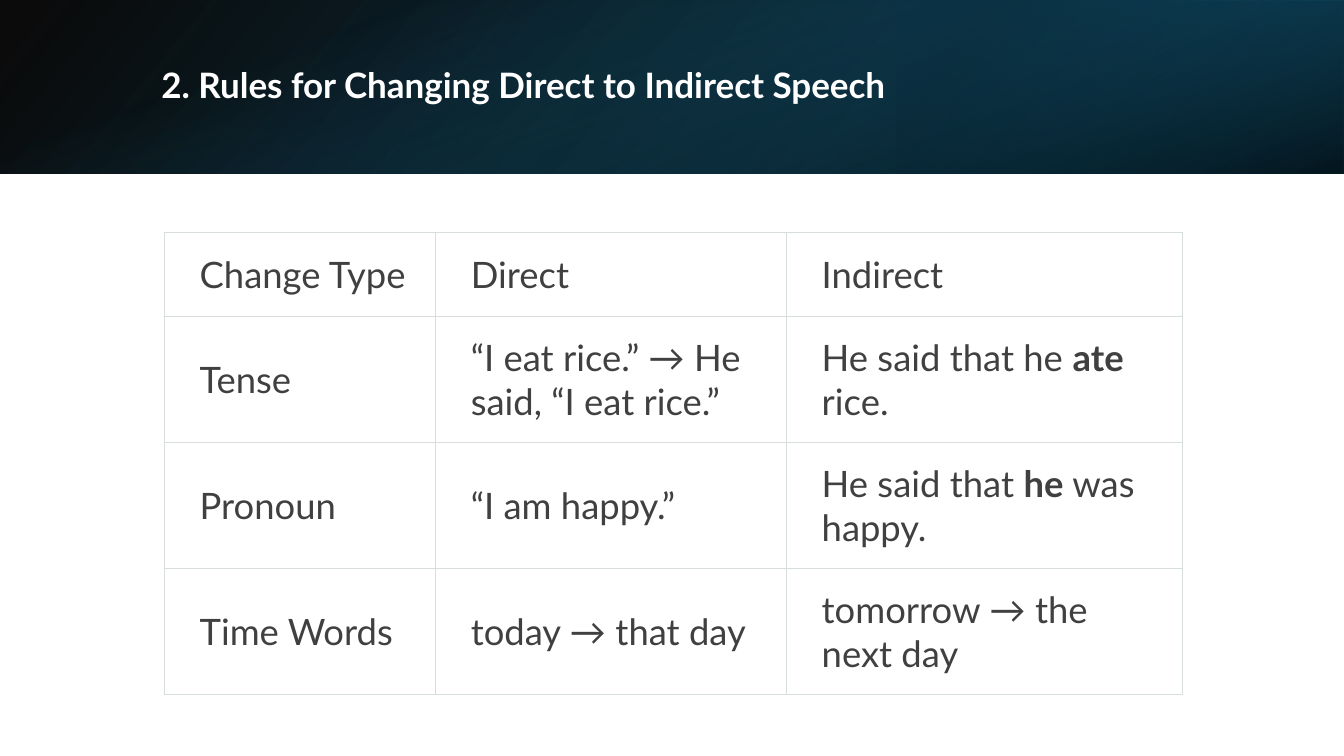
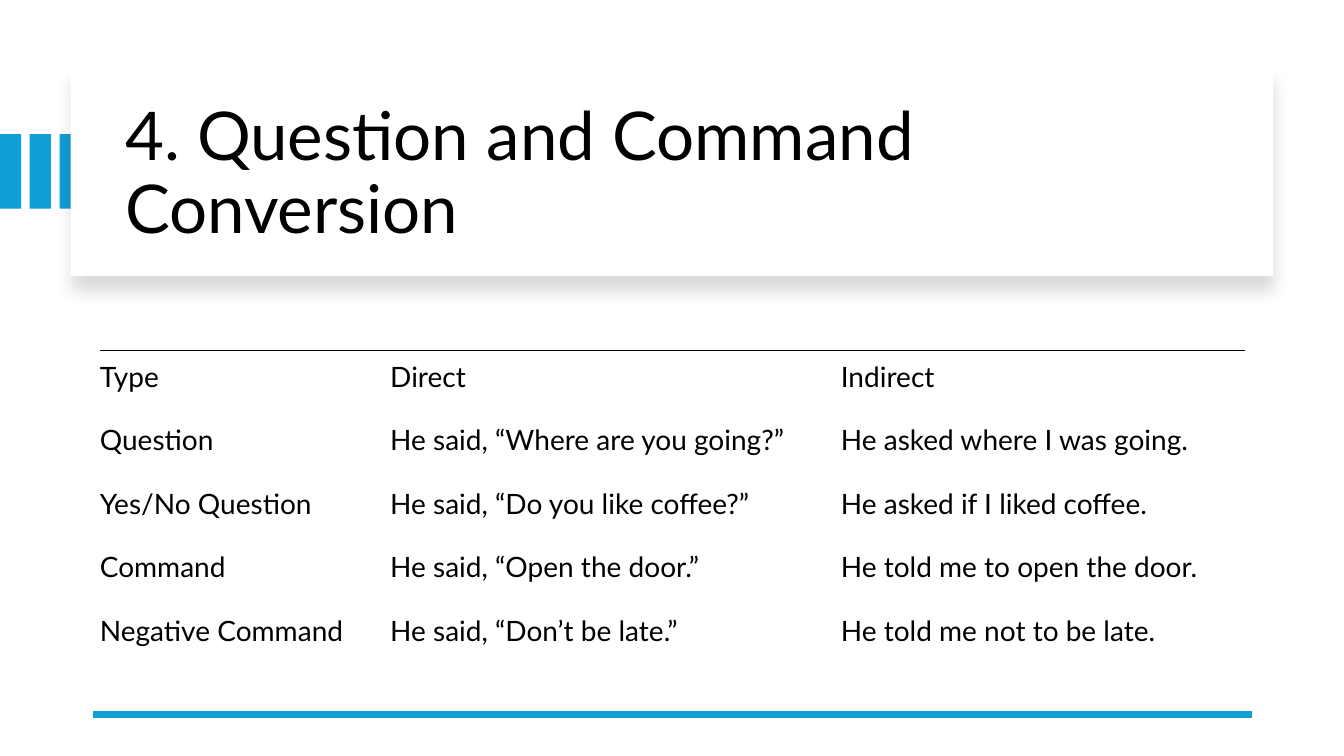
from dataclasses import dataclass

from lxml import etree
from pptx import Presentation
from pptx.dml.color import RGBColor
from pptx.enum.shapes import MSO_CONNECTOR, MSO_SHAPE
from pptx.enum.text import MSO_ANCHOR, MSO_AUTO_SIZE, PP_ALIGN
from pptx.oxml import parse_xml
from pptx.oxml.ns import qn
from pptx.util import Inches, Pt

RECT = MSO_SHAPE.RECTANGLE
LINE = MSO_CONNECTOR.STRAIGHT
MID = MSO_ANCHOR.MIDDLE
LEFT = PP_ALIGN.LEFT
FIXED = MSO_AUTO_SIZE.NONE
NS = "http://schemas.openxmlformats.org/drawingml/2006/main"


@dataclass(frozen=True)
class Theme:
    font: str = "Lato"
    white: str = "FFFFFF"
    black: str = "000000"
    gray: str = "404040"
    rule: str = "D8DEDC"
    blue: str = "0F9ED5"
    teal: str = "156082"
    deep: str = "104862"
    navy: str = "0B3041"
    head: int = 25
    big: int = 48
    cell: int = 26
    small: int = 20
    thin: float = 0.75
    thick: float = 4.5


T = Theme()

# Content: text between asterisks is bold
RULES = {
    "title": "2. Rules for Changing Direct to Indirect Speech",
    "rows": [
        ("Change Type", "Direct", "Indirect"),
        ("Tense", "“I eat rice.” → He said, “I eat rice.”",
         "He said that he *ate* rice."),
        ("Pronoun", "“I am happy.”", "He said that *he* was happy."),
        ("Time Words", "today → that day", "tomorrow → the next day"),
    ],
}
FORMS = {
    "title": "4. Question and Command Conversion",
    "rows": [
        ("Type", "Direct", "Indirect"),
        ("Question", "He said, “Where are you going?”",
         "He asked where I was going."),
        ("Yes/No Question", "He said, “Do you like coffee?”",
         "He asked if I liked coffee."),
        ("Command", "He said, “Open the door.”",
         "He told me to open the door."),
        ("Negative Command", "He said, “Don’t be late.”",
         "He told me not to be late."),
    ],
}

# Header washes: box, turn, flip, gradient angle, stops (place, colour, alpha)
WASHES = [
    ((0, 0, 13.33, 1.72), 0, True, 140,
     [(0, T.black, 96), (100, T.deep, 100)]),
    ((8.89, 0, 4.44, 1.72), 180, True, 320,
     [(19, T.navy, 68), (100, T.teal, 79)]),
    ((5.8, -5.8, 1.72, 13.33), 90, False, 340,
     [(23, T.teal, 0), (99, T.black, 74)]),
]


def rgb(code):
    return RGBColor.from_string(code)


def put(frame, text, *, size, color, bold=False, space=None):
    """Write one paragraph; parts between asterisks turn bold."""
    para = frame.paragraphs[0]
    para.alignment = LEFT
    if space:
        para.line_spacing = space
    for i, part in enumerate(text.split("*")):
        run = para.add_run()
        run.text = part
        font = run.font
        font.name, font.size = T.font, Pt(size)
        font.bold = bold or i % 2 == 1
        font.color.rgb = rgb(color)


def block(shapes, box, color=None):
    shape = shapes.add_shape(RECT, *map(Inches, box))
    shape.shadow.inherit = False
    shape.line.fill.background()
    if color:
        shape.fill.solid()
        shape.fill.fore_color.rgb = rgb(color)
    return shape


def wash(shapes, box, turn, flip, angle, stops):
    shape = block(shapes, box)
    shape.rotation = turn
    props = shape.element.spPr
    if flip:
        props.find(qn("a:xfrm")).set("flipH", "1")
    marks = "".join(
        f'<a:gs pos="{at * 1000}"><a:srgbClr val="{color}">'
        f'<a:alpha val="{alpha * 1000}"/></a:srgbClr></a:gs>'
        for at, color, alpha in stops)
    grad = parse_xml(
        f'<a:gradFill xmlns:a="{NS}" rotWithShape="1"><a:gsLst>{marks}'
        f'</a:gsLst><a:lin ang="{angle * 60000}" scaled="0"/></a:gradFill>')
    props.find(qn("a:prstGeom")).addnext(grad)


def drop(shape):
    """Add a soft shadow below the shape."""
    effects = shape.element.spPr.find(qn("a:effectLst"))
    effects.append(parse_xml(
        f'<a:outerShdw xmlns:a="{NS}" blurRad="{Pt(11)}" dist="{Pt(10)}" '
        f'dir="5400000" algn="t" rotWithShape="0"><a:srgbClr val="{T.black}">'
        f'<a:alpha val="15000"/></a:srgbClr></a:outerShdw>'))


def edge(cell, sides, color):
    """Draw the named sides of a cell and clear the others."""
    props = cell._tc.get_or_add_tcPr()
    for side in "LRTB":
        line = etree.SubElement(props, qn(f"a:ln{side}"))
        if side in sides:
            line.set("w", str(Pt(T.thin)))
            fill = etree.SubElement(line, qn("a:solidFill"))
            etree.SubElement(fill, qn("a:srgbClr")).set("val", color)
        else:
            etree.SubElement(line, qn("a:noFill"))


def grid(slide, rows, at, cols, highs, pads, sides, line, **style):
    """Add a table; sides(row) names the edges drawn in that row."""
    size = sum(cols), sum(highs)
    table = slide.shapes.add_table(
        len(rows), len(cols), *map(Inches, at + size)).table
    table.first_row = table.horz_banding = False
    for col, wide in zip(table.columns, cols):
        col.width = Inches(wide)
    for r, (row, high) in enumerate(zip(rows, highs)):
        table.rows[r].height = Inches(high)
        for c, text in enumerate(row):
            cell = table.cell(r, c)
            (cell.margin_left, cell.margin_top,
             cell.margin_right, cell.margin_bottom) = map(Inches, pads)
            cell.vertical_anchor = MID
            edge(cell, sides(r), line)
            cell.fill.background()
            put(cell.text_frame, text, **style)


def head(slide, text, box, **style):
    """Place the title in front of the shapes drawn so far."""
    title = slide.shapes.title
    title.left, title.top, title.width, title.height = map(Inches, box)
    tree = title.element.getparent()
    tree.append(title.element)
    frame = title.text_frame
    frame.word_wrap, frame.auto_size = True, FIXED
    frame.vertical_anchor = MID
    put(frame, text, space=0.9, **style)


def rules(slide):
    for item in WASHES:
        wash(slide.shapes, *item)
    head(slide, RULES["title"], (1.5, 0.38, 10.98, 0.96),
         size=T.head, color=T.white, bold=True)
    grid(slide, RULES["rows"], (1.63, 2.31), (2.69, 3.48, 3.93),
         (0.83,) + (1.25,) * 3, (0.35, 0.17, 0.17, 0.17),
         lambda r: "LRTB", T.rule, size=T.cell, color=T.gray)


def forms(slide):
    # Side bars
    bars = slide.shapes.add_group_shape()
    for i in range(3):
        block(bars.shapes, (i * 0.295, 1.33, 0.21, 0.74), T.blue)
    # Title card
    drop(block(slide.shapes, (0.7, 0.67, 11.93, 2.07), T.white))
    head(slide, FORMS["title"], (1.14, 0.89, 11.13, 1.7),
         size=T.big, color=T.black)
    # Bottom rule
    rule = slide.shapes.add_connector(
        LINE, *map(Inches, (12.42, 7.09, 0.92, 7.09)))
    rule.line.color.rgb = rgb(T.blue)
    rule.line.width = Pt(T.thick)
    etree.SubElement(rule.element.spPr, qn("a:effectLst"))
    # Table with a line on top only
    grid(slide, FORMS["rows"], (0.99, 3.48), (2.88, 4.47, 4.01),
         (0.63,) * 5, (0, 0.05, 0.17, 0.17),
         lambda r: "" if r else "T", T.black, size=T.small, color=T.black)


def main():
    deck = Presentation()
    deck.slide_width, deck.slide_height = Inches(13.33), Inches(7.5)
    plain = deck.slide_layouts.get_by_name("Title Only")
    for build in (rules, forms):
        slide = deck.slides.add_slide(plain)
        slide.background.fill.solid()
        slide.background.fill.fore_color.rgb = rgb(T.white)
        build(slide)
    deck.save("out.pptx")


if __name__ == "__main__":
    main()
